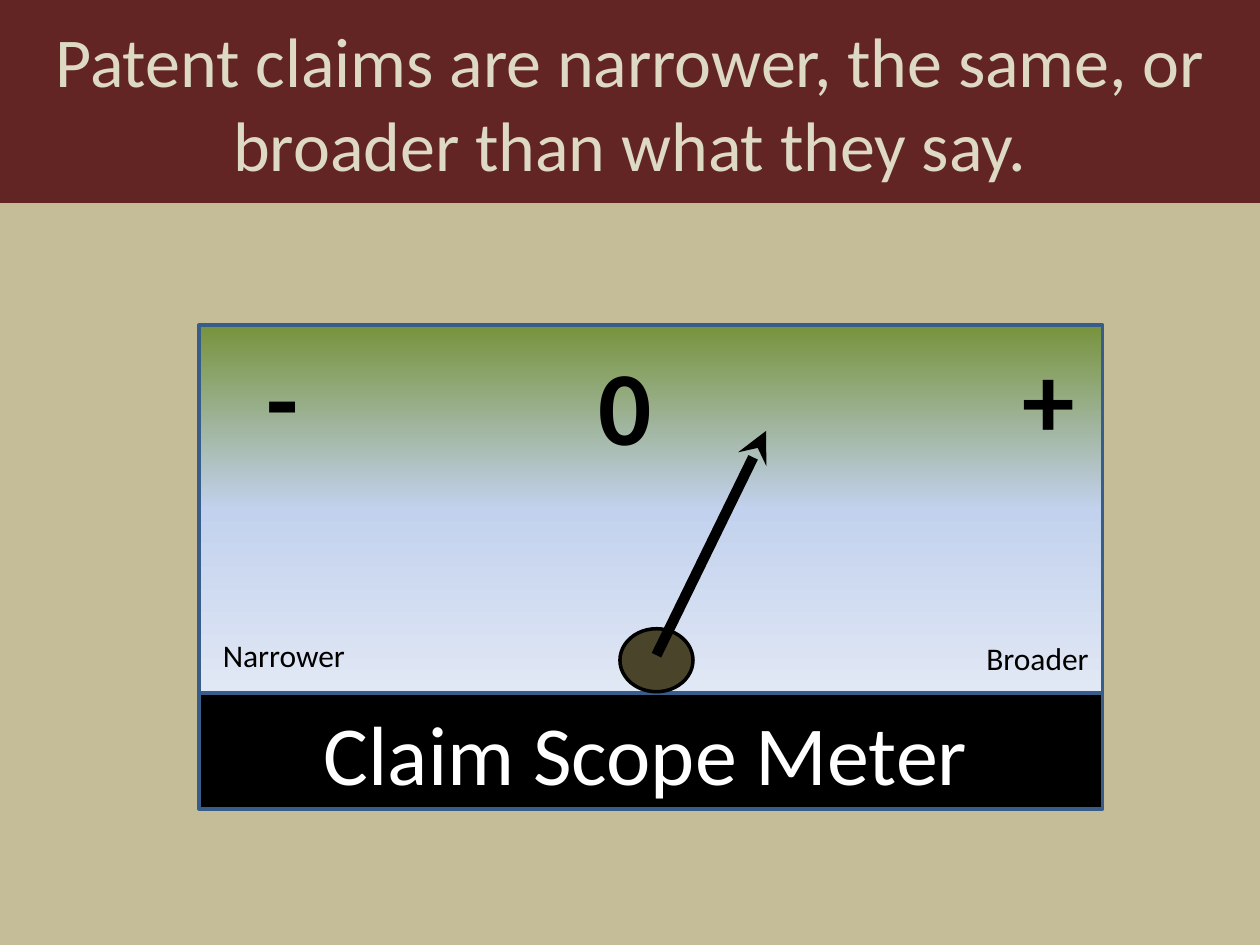
from copy import deepcopy
from pptx import Presentation
from pptx.dml.color import RGBColor as RGB
from pptx.enum.shapes import MSO_CONNECTOR as Conn, MSO_SHAPE as Kind
from pptx.enum.text import MSO_ANCHOR as Anchor, MSO_AUTO_SIZE as Fit, PP_ALIGN as Align
from pptx.oxml.ns import qn
from pptx.util import Inches, Pt
from lxml.etree import SubElement

HUES = {
    "page": "C4BD97", "band": "632523", "title": "DDD9C3",
    "edge": "385D8A", "black": "000000", "white": "FFFFFF", "hub": "4A452A",
    "top": "77933C", "mid": "C2D1ED", "low": "E1E8F5",
}
HUES = {name: RGB.from_string(code) for name, code in HUES.items()}

deck = Presentation()
deck.slide_width, deck.slide_height = Inches(10), Inches(7.5)
slide = deck.slides.add_slide(deck.slide_layouts[5])
slide.background.fill.solid()
slide.background.fill.fore_color.rgb = HUES["page"]


def write(shape, text, size, hue, align=Align.CENTER, bold=False):
    frame = shape.text_frame
    frame.text = text
    frame.word_wrap = True
    para = frame.paragraphs[0]
    para.alignment = align
    font = para.runs[0].font
    font.name, font.size, font.bold = "Calibri", Pt(size), bold
    font.color.rgb = HUES[hue]


def draw(kind, box, fill, edge):
    shape = slide.shapes.add_shape(kind, *map(Inches, box))
    shape.shadow.inherit = False
    shape.fill.solid()
    shape.fill.fore_color.rgb = HUES[fill]
    shape.line.color.rgb = HUES[edge]
    shape.line.width = Pt(2)
    return shape


# Title band
title = slide.shapes.title
title.left, title.top = 0, 0
title.width, title.height = deck.slide_width, Inches(1.61)
title.fill.solid()
title.fill.fore_color.rgb = HUES["band"]
write(title, "Patent claims are narrower, the same, or broader than what they say.", 40, "title")
title.text_frame.auto_size = Fit.NONE
title.text_frame.vertical_anchor = Anchor.MIDDLE

# Meter: dial above, name plate below
left, top, wide, high = 1.58, 2.58, 7.17, 2.92
base = top + high
draw(Kind.RECTANGLE, (left, base, wide, 0.92), "black", "edge")
dial = draw(Kind.RECTANGLE, (left, top, wide, high), "mid", "edge")
dial.fill.gradient()
dial.fill.gradient_angle = 270
first = dial._element.spPr.find(".//" + qn("a:gs"))
first.addnext(deepcopy(first))
for stop, share, hue in zip(dial.fill.gradient_stops, (0, 0.5, 1), ("top", "mid", "low")):
    stop.position = share
    stop.color.rgb = HUES[hue]

# Text on the meter
labels = [
    ("Claim Scope Meter", (2.29, 5.52, 5.67, 0.91), 48, "white", Align.CENTER, False),
    ("-", (1.83, 2.59, 0.83, 1.11), 60, "black", Align.CENTER, True),
    ("0", (4.55, 2.65, 0.83, 1.11), 60, "black", Align.CENTER, True),
    ("+", (7.91, 2.6, 0.83, 1.11), 60, "black", Align.CENTER, True),
    ("Narrower", (1.67, 5, 1.83, 0.4), 18, "black", Align.LEFT, False),
    ("Broader", (6.91, 5.02, 1.83, 0.4), 18, "black", Align.RIGHT, False),
]
for text, box, *style in labels:
    write(slide.shapes.add_textbox(*map(Inches, box)), text, *style)

# Hub and needle
draw(Kind.OVAL, (4.92, 4.99, 0.58, 0.5), "hub", "black")
needle = slide.shapes.add_connector(Conn.STRAIGHT, *map(Inches, (5.21, 5.2, 6.08, 3.42)))
needle.line.color.rgb = HUES["black"]
needle.line.width = Pt(6)
SubElement(needle.line._get_or_add_ln(), qn("a:tailEnd"), type="stealth")
SubElement(needle._element.spPr, qn("a:effectLst"))

deck.save("out.pptx")
